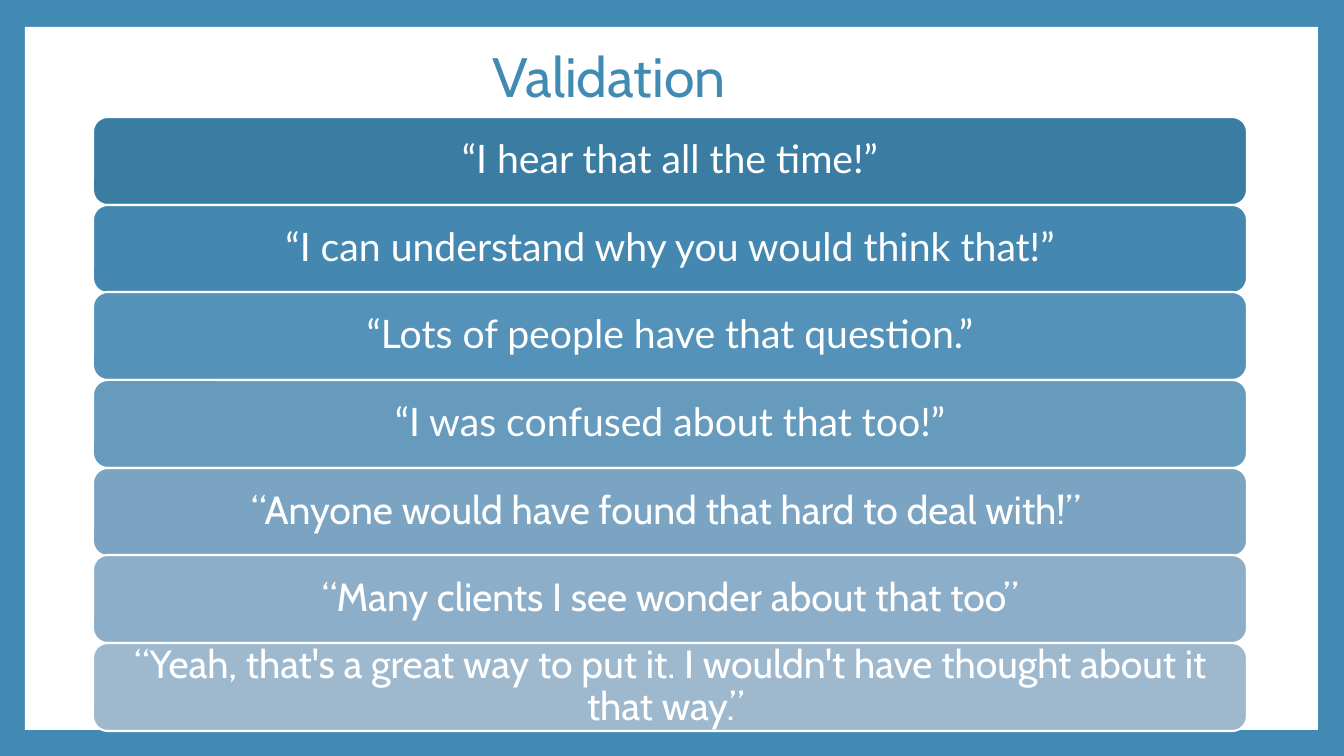
from dataclasses import dataclass

from pptx import Presentation
from pptx.dml.color import RGBColor
from pptx.enum.shapes import MSO_SHAPE
from pptx.enum.text import MSO_ANCHOR, PP_ALIGN
from pptx.shapes.autoshape import Shape
from pptx.slide import Slide
from pptx.text.text import TextFrame
from pptx.util import Emu, Pt

PX_PER_INCH = 100.8
BLUE, WHITE = "418AB3", "FFFFFF"
BAR_LEFT, BAR_TOP, BAR_WIDTH, BAR_HEIGHT = 93, 117, 1154, 88
BAR_STEP = 87.7


@dataclass(frozen=True)
class Quote:
    text: str
    fill: str
    font: str


QUOTES = [
    Quote("“I hear that all the time!”", "3B7DA2", "Lato"),
    Quote("“I can understand why you would think that!”", "4488B1", "Lato"),
    Quote("“Lots of people have that question.”", "5492B9", "Lato"),
    Quote("“I was confused about that too!”", "679BBD", "Lato"),
    Quote("“Anyone would have found that hard to deal with!” ", "7AA4C2", "Cabin"),
    Quote("“Many clients I see wonder about that too”", "8DAEC8", "Cabin"),
    Quote(
        "“Yeah, that's a great way to put it. I wouldn't have thought about it that way.” ",
        "9EB8CE",
        "Cabin",
    ),
]


def px(length: int) -> Emu:
    return Emu(round(length * 914400 / PX_PER_INCH))


def color(value: str) -> RGBColor:
    return RGBColor.from_string(value)


def write(
    frame: TextFrame, text: str, font: str, size: float, ink: str, align: PP_ALIGN,
    side: int, edge: int,
) -> None:
    frame.word_wrap = True
    frame.vertical_anchor = MSO_ANCHOR.MIDDLE
    frame.margin_left = frame.margin_right = px(side)
    frame.margin_top = frame.margin_bottom = px(edge)
    para = frame.paragraphs[0]
    para.text = text
    para.alignment = align
    para.line_spacing = 0.9
    para.font.name = font
    para.font.size = Pt(size)
    para.font.color.rgb = color(ink)


def add_box(
    page: Slide, kind: MSO_SHAPE, left: int, top: int, width: int, height: int, fill: str
) -> Shape:
    box = page.shapes.add_shape(kind, px(left), px(top), px(width), px(height))
    box.shadow.inherit = False
    box.fill.solid()
    box.fill.fore_color.rgb = color(fill)
    box.line.fill.background()
    return box


def add_title(page: Slide) -> None:
    title = page.shapes.title
    title.left, title.top = px(479), px(36)
    title.width, title.height = px(840), px(88)
    write(title.text_frame, "Validation", "Cabin", 39.6, BLUE, PP_ALIGN.LEFT, 13, 7)


def add_quote(page: Slide, quote: Quote, row: int) -> None:
    top = BAR_TOP + round(row * BAR_STEP)
    bar = add_box(
        page, MSO_SHAPE.ROUNDED_RECTANGLE, BAR_LEFT, top, BAR_WIDTH, BAR_HEIGHT, quote.fill
    )
    bar.line.color.rgb = color(WHITE)
    bar.line.width = Pt(1.5)
    write(bar.text_frame, quote.text, quote.font, 28, WHITE, PP_ALIGN.CENTER, 12, 6)


def main() -> None:
    deck = Presentation()
    deck.slide_width, deck.slide_height = px(1344), px(756)
    page = deck.slides.add_slide(deck.slide_layouts[5])
    page.background.fill.solid()
    page.background.fill.fore_color.rgb = color(BLUE)
    panel = add_box(page, MSO_SHAPE.RECTANGLE, 25, 27, 1293, 703, WHITE)
    page.shapes.title.element.addprevious(panel.element)
    add_title(page)
    for row, quote in enumerate(QUOTES):
        add_quote(page, quote, row)
    deck.save("out.pptx")


if __name__ == "__main__":
    main()
